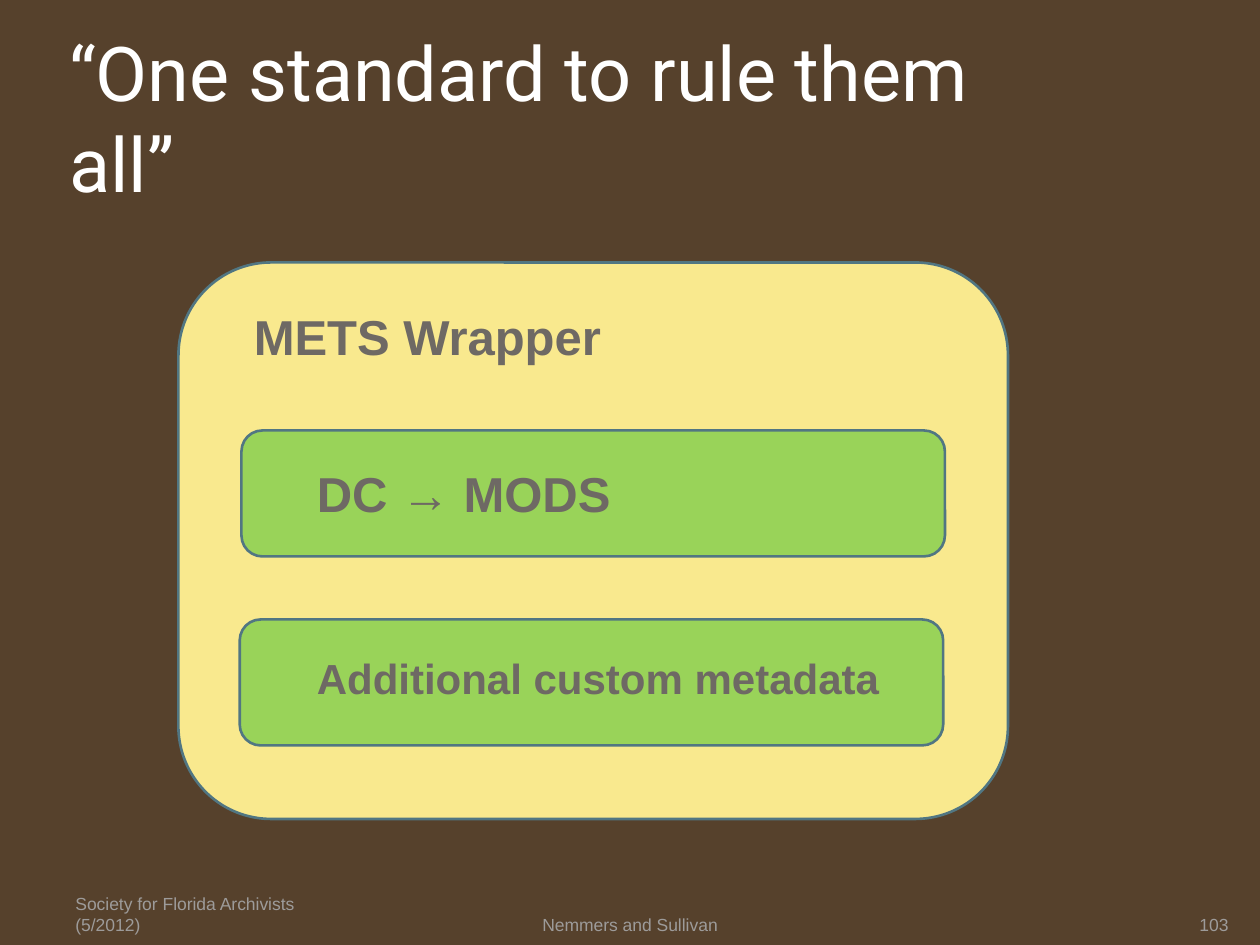
from typing import NamedTuple

from pptx import Presentation
from pptx.dml.color import RGBColor
from pptx.enum.shapes import MSO_SHAPE as Shape
from pptx.enum.text import MSO_ANCHOR as Anchor, MSO_AUTO_SIZE as AutoSize, PP_ALIGN as Align
from pptx.util import Pt

BROWN, WHITE = "56412C", "FFFFFF"
YELLOW, GREEN, OUTLINE = "F9E98E", "99D359", "517682"
LABEL_GRAY, FOOTER_GRAY = "6E6964", "9D9B9A"


class Box(NamedTuple):
    left: float
    top: float
    width: float
    height: float


class Panel(NamedTuple):
    box: Box
    fill: str


class Caption(NamedTuple):
    text: str
    box: Box
    size: float
    color: str = LABEL_GRAY
    bold: bool = True
    font: str = "Arial"
    align: Align = Align.LEFT
    anchor: Anchor = Anchor.TOP
    insets: tuple = (7.2, 3.6, 7.2, 3.6)


def footer(text: str, left: float, width: float, align: Align, insets: tuple) -> Caption:
    return Caption(text, Box(left, 505.4, width, 28.8), 10, FOOTER_GRAY, False,
                   align=align, anchor=Anchor.BOTTOM, insets=insets)


TITLE = Caption("“One standard to rule them all”", Box(36, 21.6, 588, 90), 43.2, WHITE, False,
                "Roboto", anchor=Anchor.MIDDLE, insets=(3.6,) * 4)
PANELS = [
    Panel(Box(102, 150, 474, 318), YELLOW),
    Panel(Box(138, 246, 402, 72), GREEN),
    Panel(Box(137, 354, 402, 72), GREEN),
]
CAPTIONS = [
    Caption("METS Wrapper", Box(138, 171.6, 252, 41), 28),
    Caption("DC → MODS", Box(174, 261.6, 306, 41), 28),
    Caption("Additional custom metadata", Box(174, 369.6, 365, 36), 24),
    footer("Society for Florida Archivists (5/2012)", 36, 168, Align.LEFT, (7.2, 3.6, 7.2, 0)),
    footer("Nemmers and Sullivan", 246, 228, Align.CENTER, (0, 3.6, 0, 0)),
    footer("103", 642, 60, Align.RIGHT, (0, 0, 0, 0)),
]


def rgb(color: str) -> RGBColor:
    return RGBColor.from_string(color)


def draw_panel(slide, panel: Panel) -> None:
    shape = slide.shapes.add_shape(Shape.ROUNDED_RECTANGLE, *map(Pt, panel.box))
    shape.shadow.inherit = False
    shape.fill.solid()
    shape.fill.fore_color.rgb = rgb(panel.fill)
    shape.line.color.rgb = rgb(OUTLINE)
    shape.line.width = Pt(1.5)


def write_caption(holder, caption: Caption) -> None:
    holder.left, holder.top, holder.width, holder.height = map(Pt, caption.box)
    frame = holder.text_frame
    frame.text = caption.text
    frame.word_wrap = True
    frame.auto_size = AutoSize.NONE
    frame.vertical_anchor = caption.anchor
    (frame.margin_left, frame.margin_top,
     frame.margin_right, frame.margin_bottom) = map(Pt, caption.insets)
    paragraph = frame.paragraphs[0]
    paragraph.alignment = caption.align
    font = paragraph.font
    font.name, font.size, font.bold = caption.font, Pt(caption.size), caption.bold
    font.color.rgb = rgb(caption.color)


def main() -> None:
    deck = Presentation()
    deck.slide_width, deck.slide_height = Pt(720), Pt(540)
    slide = deck.slides.add_slide(deck.slide_layouts[5])
    slide.background.fill.solid()
    slide.background.fill.fore_color.rgb = rgb(BROWN)

    # Title
    write_caption(slide.shapes.title, TITLE)

    # Wrapper with its two metadata sections
    for panel in PANELS:
        draw_panel(slide, panel)

    # Labels and footers
    for caption in CAPTIONS:
        write_caption(slide.shapes.add_textbox(*map(Pt, caption.box)), caption)

    deck.save("out.pptx")


if __name__ == "__main__":
    main()
